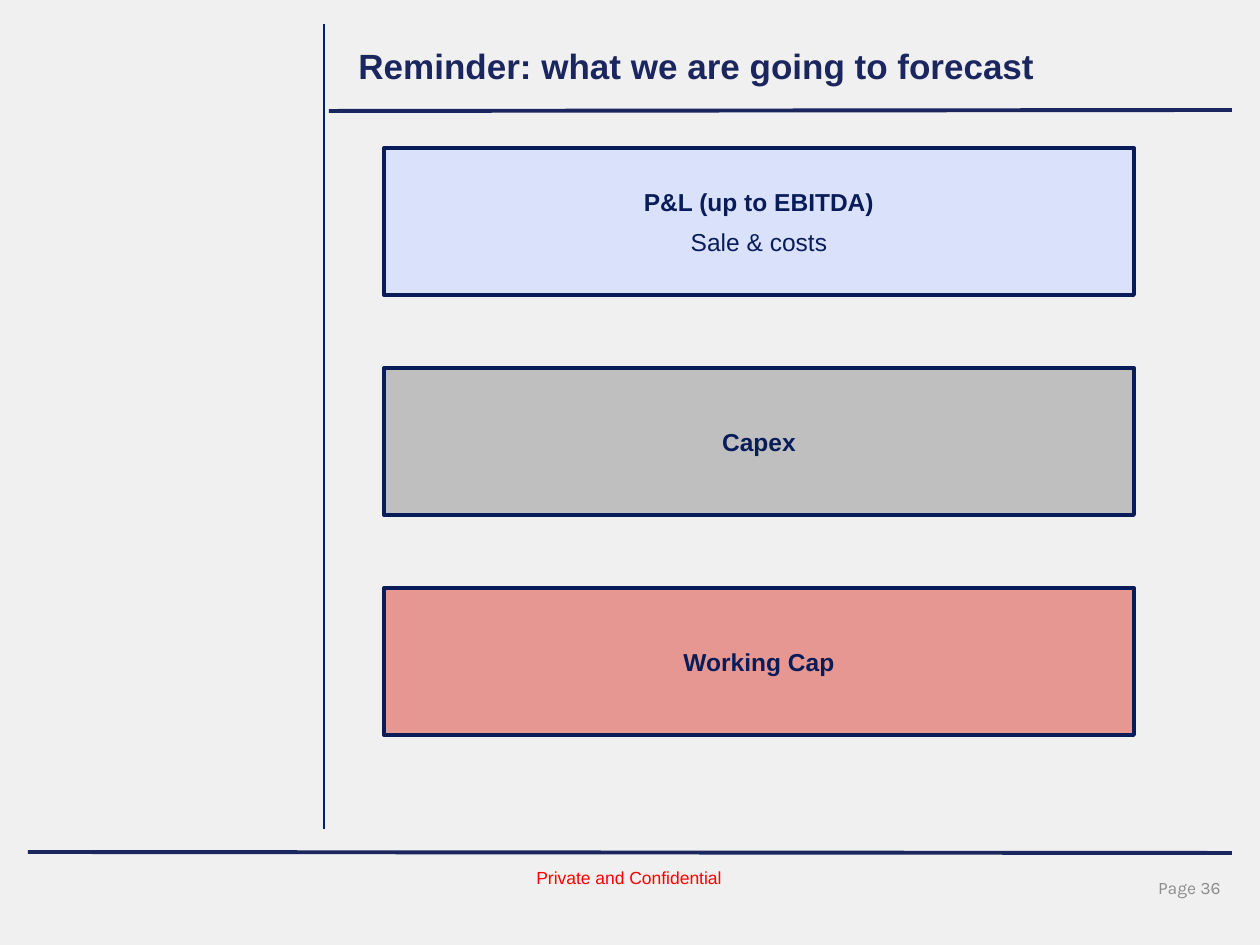
from lxml import etree
from pptx import Presentation
from pptx.dml.color import RGBColor
from pptx.enum.shapes import MSO_CONNECTOR, MSO_SHAPE
from pptx.enum.text import MSO_ANCHOR as ANCHOR, MSO_AUTO_SIZE as FIT, PP_ALIGN as ALIGN
from pptx.oxml.ns import qn
from pptx.util import Pt

EMU_PER_PX = 914400 / 126
COLORS = {
    "background": "F0F0F0", "rule": "1B265F", "divider": "002368",
    "page": "8C8C8C", "notice": "FF0000", "box_ink": "091C5A",
    "pnl": "DAE2FB", "capex": "BFBFBF", "working_cap": "E69791",
}


def px(length):
    return round(length * EMU_PER_PX)


def color(name):
    return RGBColor.from_string(COLORS[name])


class Page:
    def __init__(self, slide):
        self.slide = slide
        fill = slide.background.fill
        fill.solid()
        fill.fore_color.rgb = color("background")

    def fill_text(self, frame, lines, ink, frame_format, **paragraph_format):
        for key, value in frame_format.items():
            setattr(frame, key, value)
        for index, (text, font_format) in enumerate(lines):
            paragraph = frame.paragraphs[0] if index == 0 else frame.add_paragraph()
            for key, value in paragraph_format.items():
                setattr(paragraph, key, value)
            run = paragraph.add_run()
            run.text = text
            for key, value in {"name": "Arial", **font_format}.items():
                setattr(run.font, key, value)
            run.font.color.rgb = color(ink)

    def rule(self, start, end, ink, weight):
        line = self.slide.shapes.add_connector(
            MSO_CONNECTOR.STRAIGHT, *map(px, start + end))
        line.line.color.rgb = color(ink)
        line.line.width = Pt(weight)
        etree.SubElement(line._element.spPr, qn("a:effectLst"))

    def label(self, area, text, ink, font_format, frame_format, align=ALIGN.LEFT):
        label = self.slide.shapes.add_textbox(*map(px, area))
        self.fill_text(label.text_frame, [(text, font_format)], ink,
                       {"word_wrap": True, **frame_format}, alignment=align)

    def box(self, area, fill, lines):
        box = self.slide.shapes.add_shape(MSO_SHAPE.RECTANGLE, *map(px, area))
        box.shadow.inherit = False
        box.fill.solid()
        box.fill.fore_color.rgb = color(fill)
        box.line.color.rgb = color("box_ink")
        box.line.width = Pt(2.25)
        self.fill_text(box.text_frame, lines, "box_ink",
                       {"word_wrap": True, "vertical_anchor": ANCHOR.MIDDLE},
                       alignment=ALIGN.CENTER, space_after=Pt(6))


def main():
    deck = Presentation()
    deck.slide_width, deck.slide_height = px(1260), px(945)
    page = Page(deck.slides.add_slide(deck.slide_layouts[6]))

    page.rule((28, 852), (1232, 853), "rule", 2.25)
    page.label((944, 863, 293, 50), "Page 36 ", "page",
               {"name": "Karla", "size": Pt(10)},
               {"vertical_anchor": ANCHOR.MIDDLE}, ALIGN.RIGHT)
    page.rule((329, 111), (1232, 110), "rule", 2.25)
    page.label((524, 861, 212, 34), "Private and Confidential", "notice",
               {"size": Pt(10)},
               {"word_wrap": False, "auto_size": FIT.SHAPE_TO_FIT_TEXT})
    for top, bottom in ((24, 108), (32, 829)):
        page.rule((324, top), (324, bottom), "divider", 0.75)

    page.label((346, 38, 850, 67), "Reminder: what we are going to forecast",
               "rule", {"size": Pt(20), "bold": True}, {})

    heading = {"size": Pt(14), "bold": True}
    detail = {"size": Pt(14), "bold": False}
    forecasts = [
        ("pnl", [("P&L (up to EBITDA)", heading), ("Sale & costs", detail)]),
        ("capex", [("Capex", heading)]),
        ("working_cap", [("Working Cap", heading)]),
    ]
    for row, (fill, lines) in enumerate(forecasts):
        page.box((384, 148 + 220 * row, 750, 147), fill, lines)

    deck.save("out.pptx")


if __name__ == "__main__":
    main()
